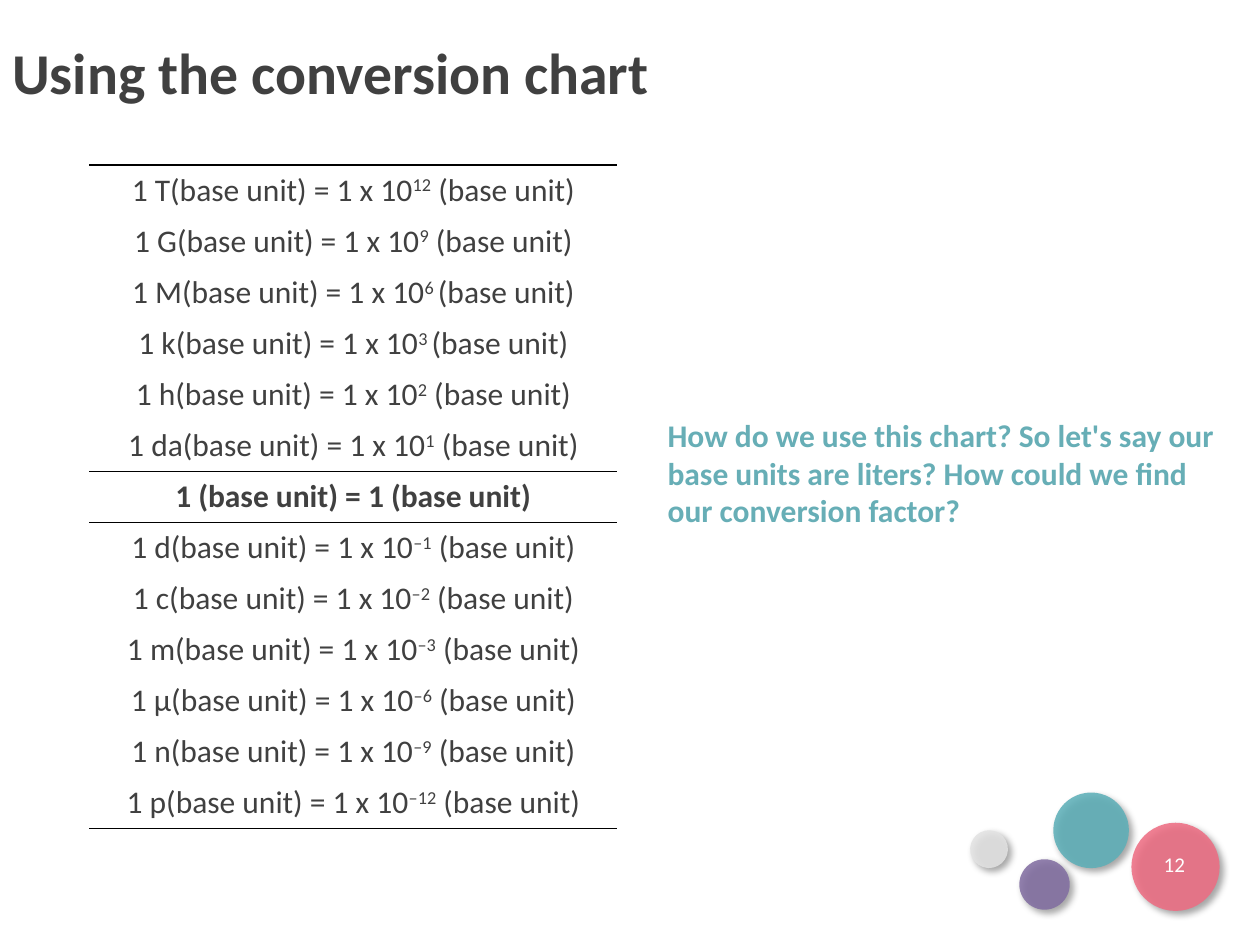
from lxml import etree
from pptx import Presentation, util as u
from pptx.dml.color import RGBColor
from pptx.enum import shapes, text
from pptx.oxml import parse_xml
from pptx.oxml.ns import nsdecls, qn

FONT = "Calibri"
DARK = RGBColor(0x40, 0x40, 0x40)
WHITE = RGBColor(0xFF, 0xFF, 0xFF)
TEAL_TEXT = RGBColor(0x67, 0xAE, 0xB6)
GREY = RGBColor(0xE3, 0xE3, 0xE3)
PURPLE = RGBColor(0x81, 0x6D, 0xA1)
TEAL = RGBColor(0x5C, 0xAF, 0xB8)
PINK = RGBColor(0xEE, 0x6C, 0x82)

presentation = Presentation()
presentation.slide_width, presentation.slide_height = u.Inches(10), u.Inches(7.5)
slide = presentation.slides.add_slide(presentation.slide_layouts[6])

# Grid of 100 columns by 75 rows
COLUMN = presentation.slide_width / 100
ROW = presentation.slide_height / 75


def place(left, top, width, height):
    return [u.Emu(round(n * step)) for n, step in
            zip((left, top, width, height), (COLUMN, ROW, COLUMN, ROW))]


def add_run(paragraph, words, size, color, bold=False, raised=False):
    run = paragraph.add_run()
    run.text = words
    run.font.name, run.font.size, run.font.bold = FONT, u.Pt(size), bold
    run.font.color.rgb = color
    if raised:
        run._r.get_or_add_rPr().set("baseline", "30000")


# Bubbles in the corner: left, top, diameter, colour, rotation
bubbles = [
    (77, 65.9, 3, GREY, 2.8),
    (80.9, 68.2, 4, PURPLE, 0),
    (83.6, 62.9, 6, TEAL, 0),
    (89.8, 65.3, 7, PINK, 0),
]
for left, top, diameter, color, rotation in bubbles:
    bubble = slide.shapes.add_shape(
        shapes.MSO_SHAPE.OVAL, *place(left, top, diameter, diameter))
    bubble.rotation = rotation
    bubble.fill.solid()
    bubble.fill.fore_color.rgb = color
    bubble.line.fill.background()
    fill_color = bubble._element.spPr.find(qn("a:solidFill"))[0]
    etree.SubElement(fill_color, qn("a:alpha")).set("val", "86000")
    bubble.shadow.inherit = False
    effects = bubble._element.spPr.find(qn("a:effectLst"))
    effects.append(parse_xml(
        f'<a:outerShdw {nsdecls("a")} blurRad="{u.Pt(4)}" dist="{u.Pt(3)}" '
        'dir="2700000" algn="tl" rotWithShape="0"><a:srgbClr val="000000">'
        '<a:alpha val="40000"/></a:srgbClr></a:outerShdw>'))

# Slide number, question and title
MIDDLE, TOP = text.MSO_ANCHOR.MIDDLE, text.MSO_ANCHOR.TOP
LEFT, CENTER = text.PP_ALIGN.LEFT, text.PP_ALIGN.CENTER
question = ("How do we use this chart? So let's say our base units are liters? "
            "How could we find our conversion factor?")
labels = [
    ("12", (91.3, 66.6, 3.8, 4), 12, WHITE, False, MIDDLE, CENTER, 1),
    (question, (52, 32.5, 46.8, 10.1), 18, TEAL_TEXT, True, TOP, LEFT, 1),
    ("Using the conversion chart", (0, 3, 90.3, 6), 33, DARK, True, MIDDLE, LEFT, 0.9),
]
for words, box, size, color, bold, anchor, alignment, spacing in labels:
    frame = slide.shapes.add_textbox(*place(*box)).text_frame
    frame.word_wrap = True
    frame.vertical_anchor = anchor
    paragraph = frame.paragraphs[0]
    paragraph.alignment = alignment
    paragraph.line_spacing = spacing
    add_run(paragraph, words, size, color, bold)

# Conversion table: prefix and exponent; the base unit row has neither
conversions = [
    ("T", "12"), ("G", "9"), ("M", "6 "), ("k", "3 "), ("h", "2"), ("da", "1"),
    ("", ""),
    ("d", "–1"), ("c", "–2"), ("m", "–3"), ("μ", "–6"), ("n", "–9"), ("p", "–12"),
]
base_row = conversions.index(("", ""))
ruled_edges = {0, base_row, base_row + 1, len(conversions)}
table = slide.shapes.add_table(
    len(conversions), 1, *place(7.1, 13.1, 41.9, 52.7)).table
table.first_row = table.horz_banding = False

for index, (prefix, exponent) in enumerate(conversions):
    cell = table.cell(index, 0)
    cell.fill.background()
    cell.vertical_anchor = MIDDLE
    paragraph = cell.text_frame.paragraphs[0]
    paragraph.alignment = CENTER
    if prefix:
        ending = "(base unit)" if exponent.endswith(" ") else " (base unit)"
        add_run(paragraph, f"1 {prefix}(base unit) = 1 x 10", 18, DARK)
        add_run(paragraph, exponent, 18, DARK, raised=True)
        add_run(paragraph, ending, 18, DARK)
    else:
        add_run(paragraph, "1 (base unit) = 1 (base unit)", 18, DARK, bold=True)

    # Rules above and below each group, no other borders
    edges = [("lnL", False), ("lnR", False),
             ("lnT", index in ruled_edges), ("lnB", index + 1 in ruled_edges)]
    for position, (tag, ruled) in enumerate(edges):
        paint = ('<a:solidFill><a:srgbClr val="000000"/></a:solidFill>'
                 if ruled else "<a:noFill/>")
        cell._tc.get_or_add_tcPr().insert(position, parse_xml(
            f'<a:{tag} {nsdecls("a")} w="{u.Pt(1)}">{paint}</a:{tag}>'))

presentation.save("out.pptx")
